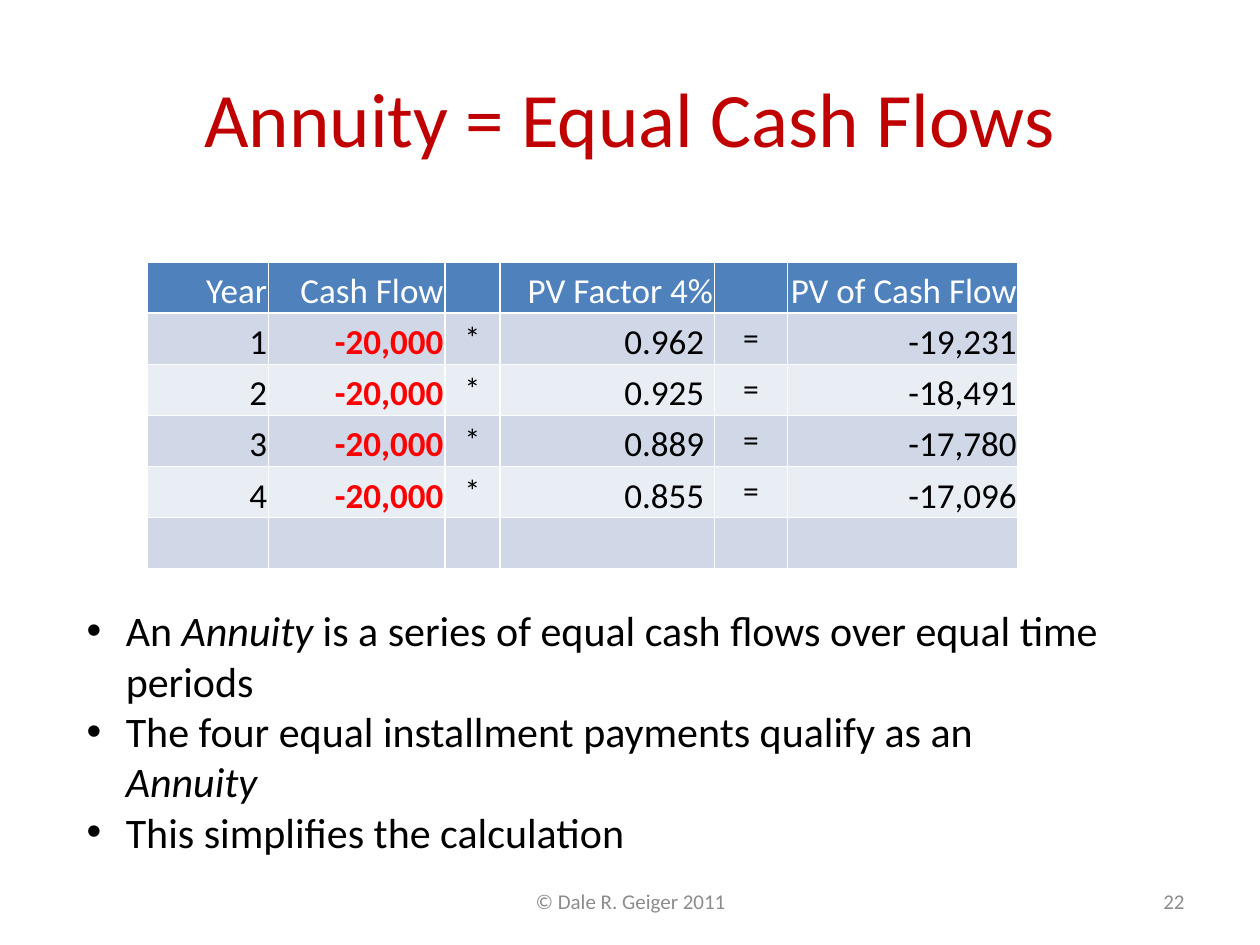
import lxml.etree
import pptx
import pptx.dml.color
import pptx.enum.text
import pptx.oxml.ns
import pptx.util

ALIGN = pptx.enum.text.PP_ALIGN
ANCHOR = pptx.enum.text.MSO_ANCHOR


def color(value):
    return pptx.dml.color.RGBColor.from_string(value)


class SlideBuilder:
    font_name = "Calibri"
    black, white, gray = "000000", "FFFFFF", "8C8C8C"
    title_color, negative_color = "C00000", "FF0000"
    header_fill, bands = "4F81BD", ("D0D8E8", "E9EDF4")

    def __init__(self, presentation):
        self.width = presentation.slide_width
        self.height = presentation.slide_height
        self.slide = presentation.slides.add_slide(presentation.slide_layouts[5])

    def box(self, left, top, width, height):
        return (round(left * self.width), round(top * self.height),
                round(width * self.width), round(height * self.height))

    def style(self, paragraph, size, font_color, align=ALIGN.LEFT, bold=False):
        font = paragraph.font
        font.name, font.size, font.bold = self.font_name, pptx.util.Pt(size), bold
        font.color.rgb = color(font_color)
        paragraph.alignment = align

    def title(self, text, *place):
        shape = self.slide.shapes.title
        shape.left, shape.top, shape.width, shape.height = self.box(*place)
        shape.text_frame.text = text
        shape.text_frame.vertical_anchor = ANCHOR.MIDDLE
        self.style(shape.text_frame.paragraphs[0], 44, self.title_color, ALIGN.CENTER)

    def text_frame(self, *place):
        frame = self.slide.shapes.add_textbox(*self.box(*place)).text_frame
        frame.word_wrap = True
        return frame

    def footer(self, text, align, *place):
        frame = self.text_frame(*place)
        frame.vertical_anchor = ANCHOR.MIDDLE
        frame.text = text
        self.style(frame.paragraphs[0], 12, self.gray, align)

    def bullets(self, items, *place):
        frame = self.text_frame(*place)
        frame.auto_size = pptx.enum.text.MSO_AUTO_SIZE.SHAPE_TO_FIT_TEXT
        indent = pptx.util.Inches(0.31)
        for index, item in enumerate(items):
            paragraph = frame.add_paragraph() if index else frame.paragraphs[0]
            self.style(paragraph, 24, self.black)
            for text, italic in item:
                run = paragraph.add_run()
                run.text = text
                run.font.italic = italic
            properties = paragraph._p.get_or_add_pPr()
            properties.set("marL", str(indent))
            properties.set("indent", str(-indent))
            bullet_font = lxml.etree.Element(pptx.oxml.ns.qn("a:buFont"), typeface="Arial")
            bullet = lxml.etree.Element(pptx.oxml.ns.qn("a:buChar"), char="•")
            for position, element in enumerate((bullet_font, bullet)):
                properties.insert(position, element)

    def cell(self, cell, text, row, column):
        cell.fill.solid()
        cell.fill.fore_color.rgb = color(
            self.bands[(row - 1) % 2] if row else self.header_fill)
        if not text:
            return
        cell.text = text
        paragraph = cell.text_frame.paragraphs[0]
        if text in ("*", "="):
            self.style(paragraph, 18, self.black, ALIGN.CENTER)
            return
        cell.vertical_anchor = ANCHOR.BOTTOM
        cell.margin_left = cell.margin_top = pptx.util.Inches(0.01)
        cell.margin_right = pptx.util.Inches(0.08 if row and column == 3 else 0.01)
        cell.margin_bottom = 0
        is_cash_flow = row > 0 and column == 1
        text_color = self.negative_color if is_cash_flow else self.black
        self.style(paragraph, 20, text_color if row else self.white,
                   ALIGN.RIGHT, is_cash_flow)

    def table(self, rows, column_shares, left, top, row_height):
        place = self.box(left, top, sum(column_shares), row_height * len(rows))
        table = self.slide.shapes.add_table(len(rows), len(column_shares), *place).table
        for column, share in zip(table.columns, column_shares):
            column.width = round(share * self.width)
        for row, values in enumerate(rows):
            for column, value in enumerate(values):
                self.cell(table.cell(row, column), value, row, column)


def main():
    presentation = pptx.Presentation()
    presentation.slide_width = pptx.util.Inches(10)
    presentation.slide_height = pptx.util.Inches(7.5)
    builder = SlideBuilder(presentation)

    builder.title("Annuity = Equal Cash Flows", 0.05, 0.04, 0.9, 1 / 6)

    factors = ("0.962", "0.925", "0.889", "0.855")
    present_values = ("-19,231", "-18,491", "-17,780", "-17,096")
    rows = [("Year", "Cash Flow", "", "PV Factor 4%", "", "PV of Cash Flow")]
    for year, (factor, value) in enumerate(zip(factors, present_values), 1):
        rows.append((str(year), "-20,000", "*", factor, "=", value))
    rows.append(("",) * 6)
    builder.table(rows, (0.096, 0.14, 0.044, 0.17, 0.058, 0.183),
                  0.117, 2.08 / 7.5, 0.405 / 7.5)

    builder.bullets((
        (("An ", False), ("Annuity", True),
         (" is a series of equal cash flows over equal time periods", False)),
        (("The four equal installment payments qualify as an ", False),
         ("Annuity", True)),
        (("This simplifies the calculation", False),),
    ), 0.059, 4.75 / 7.5, 0.833, 2.12 / 7.5)

    footer_top, footer_height = 6.95 / 7.5, 0.4 / 7.5
    builder.footer("© Dale R. Geiger 2011", ALIGN.CENTER,
                   0.342, footer_top, 0.317, footer_height)
    builder.footer("22", ALIGN.RIGHT, 0.717, footer_top, 0.233, footer_height)

    presentation.save("out.pptx")


if __name__ == "__main__":
    main()
